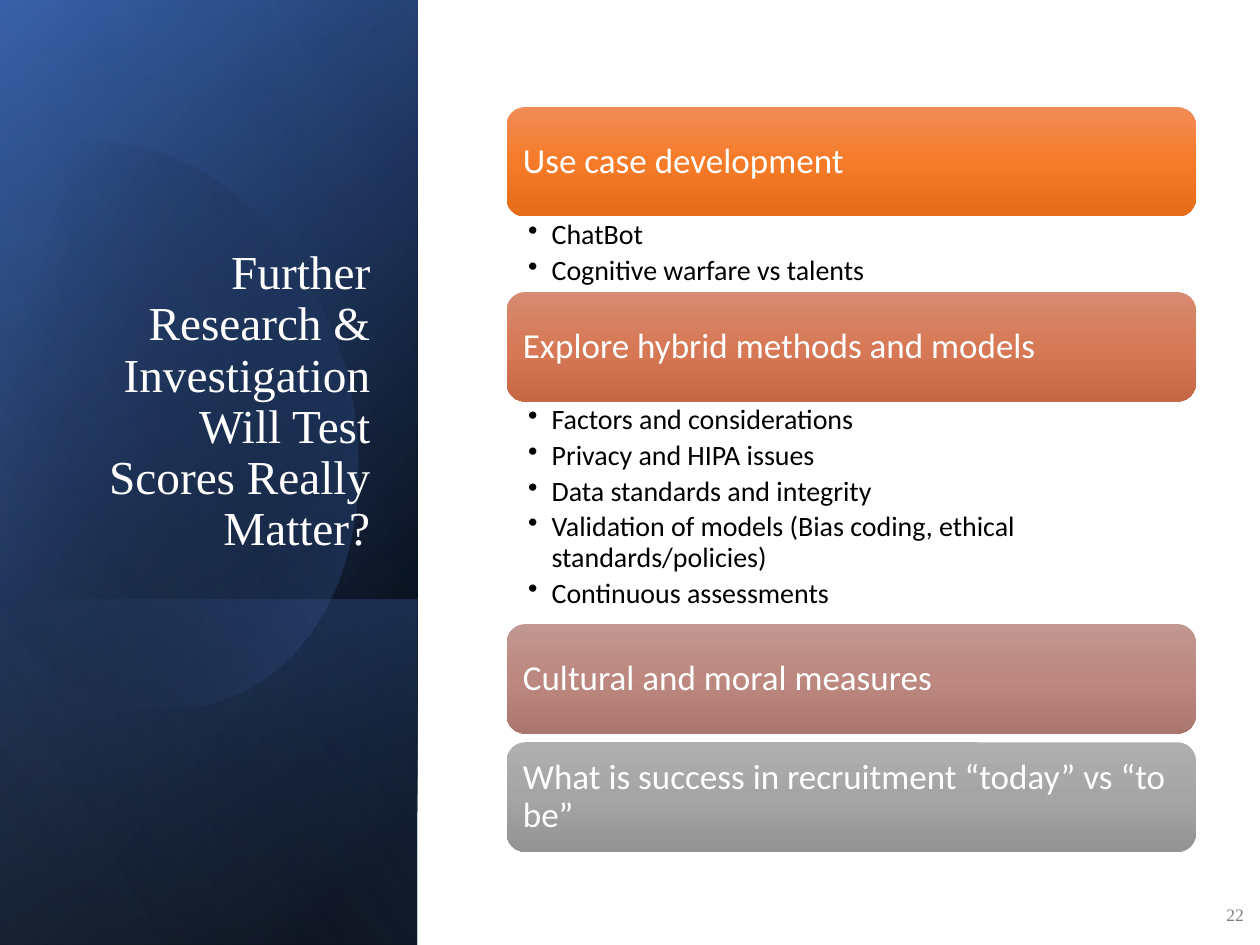
from math import cos, radians, sin

from lxml.etree import SubElement
from pptx import Presentation
from pptx.dml.color import RGBColor as Rgb
from pptx.enum.shapes import MSO_SHAPE as Kind
from pptx.enum.text import MSO_ANCHOR as Anchor, MSO_AUTO_SIZE as Fit, PP_ALIGN as Align
from pptx.oxml.ns import qn
from pptx.util import Pt

BLACK = Rgb(0x00, 0x00, 0x00)
WHITE = Rgb(0xFF, 0xFF, 0xFF)
GREY = Rgb(0x80, 0x80, 0x80)
NAVY = Rgb(0x2F, 0x55, 0x97)
BLUE = Rgb(0x44, 0x72, 0xC4)
PALE = Rgb(0x8F, 0xAA, 0xDC)
ORANGE = Rgb(0xF1, 0x8C, 0x57), Rgb(0xF6, 0x7B, 0x28), Rgb(0xE5, 0x6C, 0x19)
RUST = Rgb(0xD7, 0x8B, 0x72), Rgb(0xD7, 0x79, 0x56), Rgb(0xC6, 0x68, 0x46)
ROSE = Rgb(0xC1, 0x97, 0x91), Rgb(0xBC, 0x88, 0x80), Rgb(0xAA, 0x76, 0x6E)
ASH = Rgb(0xAF, 0xAF, 0xAF), Rgb(0xA5, 0xA5, 0xA5), Rgb(0x93, 0x93, 0x93)

SERIF, SANS = "Times New Roman", "Calibri"
HEAD = {"name": SERIF, "size": Pt(27), "color": WHITE}
PAGE = {"name": SERIF, "size": Pt(10), "color": GREY}
TOPIC = {"name": SANS, "size": Pt(20), "color": WHITE}
POINT = {"name": SANS, "size": Pt(16), "color": BLACK}

TOPICS = [
    ("Use case development", ORANGE, 43.2, ["ChatBot", "Cognitive warfare vs talents"]),
    ("Explore hybrid methods and models", RUST, 127.2, [
        "Factors and considerations",
        "Privacy and HIPA issues",
        "Data standards and integrity",
        "Validation of models (Bias coding, ethical standards/policies)",
        "Continuous assessments",
    ]),
    ("Cultural and moral measures", ROSE, 5, []),
    ("What is success in recruitment “today” vs “to be”", ASH, 0, []),
]

START = 0.96, 1.14
CURVES = [
    [(1.71, 1.22), (2.44, 1.92), (2.73, 2.9)],
    [(3.07, 4.12), (2.62, 5.31), (1.71, 5.57)],
    [(1.14, 5.74), (0.53, 5.5), (0.07, 5)],
    [(-0.03, 4.88)],
    [(-0.25, 1.66)],
    [(-0.15, 1.54)],
    [(0.02, 1.37), (0.22, 1.25), (0.45, 1.18)],
    [(0.62, 1.13), (0.79, 1.12), START],
]
TILT = 16.1
MID = 1.19, 3.35


def assign(item, values):
    """Set each named attribute of an item."""
    for name, value in values.items():
        setattr(item, name, value)


def style(text, look):
    """Give a run or paragraph its font."""
    assign(text.font, {key: val for key, val in look.items() if key != "color"})
    text.font.color.rgb = look["color"]


def shade(shape, stops, angle):
    """Fill a shape with a gradient of (place, colour, opacity) stops, without outline."""
    shape.shadow.inherit = False
    shape.line.fill.background()
    shape.fill.gradient()
    grad = shape.element.spPr.find(qn("a:gradFill"))
    stop_list = grad.find(qn("a:gsLst"))
    for old in list(stop_list):
        stop_list.remove(old)
    for place, color, alpha in stops:
        stop = SubElement(stop_list, qn("a:gs"), pos=str(place * 1000))
        tint = SubElement(stop, qn("a:srgbClr"), val=str(color))
        if alpha < 100:
            SubElement(tint, qn("a:alpha"), val=str(alpha * 1000))
    grad.find(qn("a:lin")).set("ang", str(angle * 60000))


def add_turned(shapes, box, stops, angle):
    """Add a mirrored rectangle, turned a quarter, that covers the box."""
    x, y, w, h = box
    rect = shapes.add_shape(
        Kind.RECTANGLE, Pt(x + (w - h) / 2), Pt(y + (h - w) / 2), Pt(h), Pt(w))
    rect.rotation = 90
    rect.element.spPr.xfrm.set("flipH", "1")
    shade(rect, stops, angle)


def trace():
    """List the points along the blob's outline."""
    dots = [START]
    for curve in CURVES:
        if len(curve) == 1:
            dots += curve
            continue
        knots = [dots[-1], *curve]
        for step in range(1, 13):
            t = step / 12
            parts = (1 - t) ** 3, 3 * t * (1 - t) ** 2, 3 * t * t * (1 - t), t ** 3
            dots.append(tuple(
                sum(part * knot[axis] for part, knot in zip(parts, knots))
                for axis in (0, 1)))
    return dots


def add_blob(shapes, left, top):
    """Add the tilted round shape, offset from the panel's corner."""
    c, s = cos(radians(TILT)), sin(radians(TILT))
    dots = []
    for x, y in trace():
        dx, dy = x - MID[0], y - MID[1]
        dots.append((Pt(left + 72 * (MID[0] + dx * c - dy * s)),
                     Pt(top + 72 * (MID[1] + dx * s + dy * c))))
    pen = shapes.build_freeform(*dots[0])
    pen.add_line_segments(dots[1:], close=True)
    blob = pen.convert_to_shape()
    blob.rotation = -TILT
    shade(blob, [(29, BLACK, 0), (100, BLUE, 43)], 30)


def add_panel(shapes, box):
    """Build the layered blue side panel."""
    x, y, w, h = box
    add_turned(shapes, box, [(8, BLACK, 100), (100, NAVY, 100)], 50)
    add_turned(shapes, box, [(0, BLACK, 0), (99, BLUE, 46)], 30)
    add_turned(shapes, (x, y + h - 197.2, w, 197.2), [(2, BLUE, 29), (100, BLACK, 30)], 130)
    add_blob(shapes, x, y)
    add_turned(shapes, box, [(0, BLACK, 0), (99, PALE, 11)], 120)


def add_title(shapes, box):
    """Place the slide title in front of the panel."""
    title = shapes.title
    shapes.element.append(title.element)
    assign(title, dict(zip(("left", "top", "width", "height"), map(Pt, box))))
    frame = title.text_frame
    assign(frame, {"auto_size": Fit.NONE, "word_wrap": True, "vertical_anchor": Anchor.BOTTOM})
    para = frame.paragraphs[0]
    assign(para, {"alignment": Align.RIGHT, "line_spacing": 0.9})
    para.add_run().text = "Further Research & Investigation"
    para.add_line_break()
    para.add_run().text = "Will Test Scores Really Matter?"
    for run in para.runs:
        style(run, HEAD)


def add_text(shapes, box, lines, look, insets, form, anchor=Anchor.TOP):
    """Add a wrapped text box and return its paragraphs."""
    frame = shapes.add_textbox(*map(Pt, box)).text_frame
    sides = "margin_left", "margin_top", "margin_right", "margin_bottom"
    assign(frame, dict(zip(sides, map(Pt, insets))))
    assign(frame, {"word_wrap": True, "vertical_anchor": anchor})
    for i, line in enumerate(lines):
        para = frame.add_paragraph() if i else frame.paragraphs[0]
        assign(para, form)
        run = para.add_run()
        run.text = line
        style(run, look)
    return frame.paragraphs


def add_points(shapes, box, lines):
    """Add a bulleted list."""
    form = {"level": 1, "line_spacing": 0.9, "space_after": Pt(3.2)}
    for para in add_text(shapes, box, lines, POINT, (12.2, 2.2, 11.5, 2.2), form):
        props = para._p.get_or_add_pPr()
        props.set("marL", str(Pt(13.5)))
        props.set("indent", str(-Pt(13.5)))
        SubElement(props, qn("a:buChar"), char="•")


def add_topics(shapes, box):
    """Stack the topic bars with their lists down the box."""
    x, y, w, h = box
    tall = (h - sum(topic[2] for topic in TOPICS)) / len(TOPICS)
    for name, colors, gap, lines in TOPICS:
        bar = shapes.add_shape(Kind.ROUNDED_RECTANGLE, Pt(x), Pt(y), Pt(w), Pt(tall))
        shade(bar, [(50 * i, color, 100) for i, color in enumerate(colors)], 90)
        inner = x + 3.2, y + 3.2, w - 6.4, tall - 6.4
        add_text(shapes, inner, [name], TOPIC, [6] * 4, {"line_spacing": 0.9}, Anchor.MIDDLE)
        y += tall
        if lines:
            add_points(shapes, (x, y, w, gap), lines)
        y += gap


def main():
    """Build and save the slide."""
    deck = Presentation()
    assign(deck, {"slide_width": Pt(720), "slide_height": Pt(540)})
    shapes = deck.slides.add_slide(deck.slide_layouts[5]).shapes
    add_panel(shapes, (0, 0, 238.5, 540))
    add_title(shapes, (34.5, 132.5, 184.3, 188.6))
    add_text(shapes, (691.2, 508.3, 26.6, 28.8), ["22"], PAGE, (7.2, 3.6, 7.2, 3.6),
             {"alignment": Align.RIGHT}, Anchor.MIDDLE)
    add_topics(shapes, (289.6, 61.2, 393.8, 425.5))
    deck.save("out.pptx")


if __name__ == "__main__":
    main()
